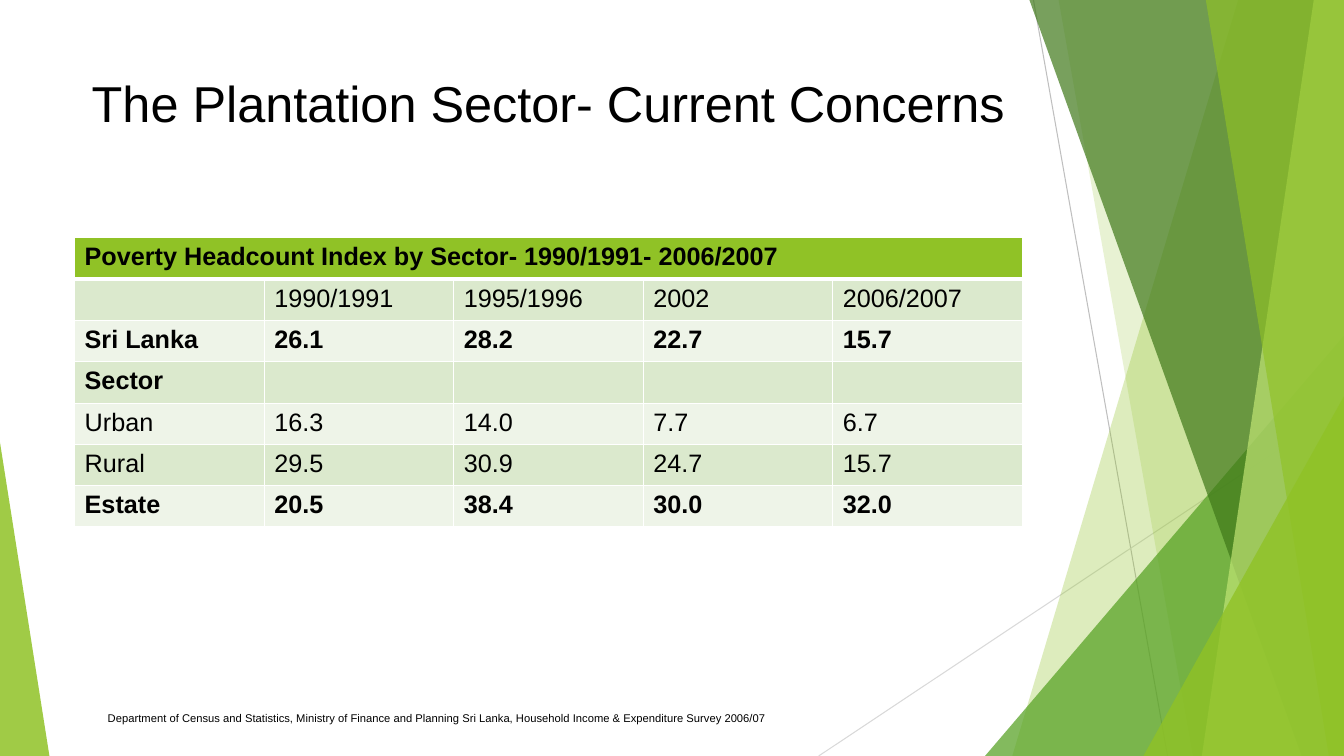
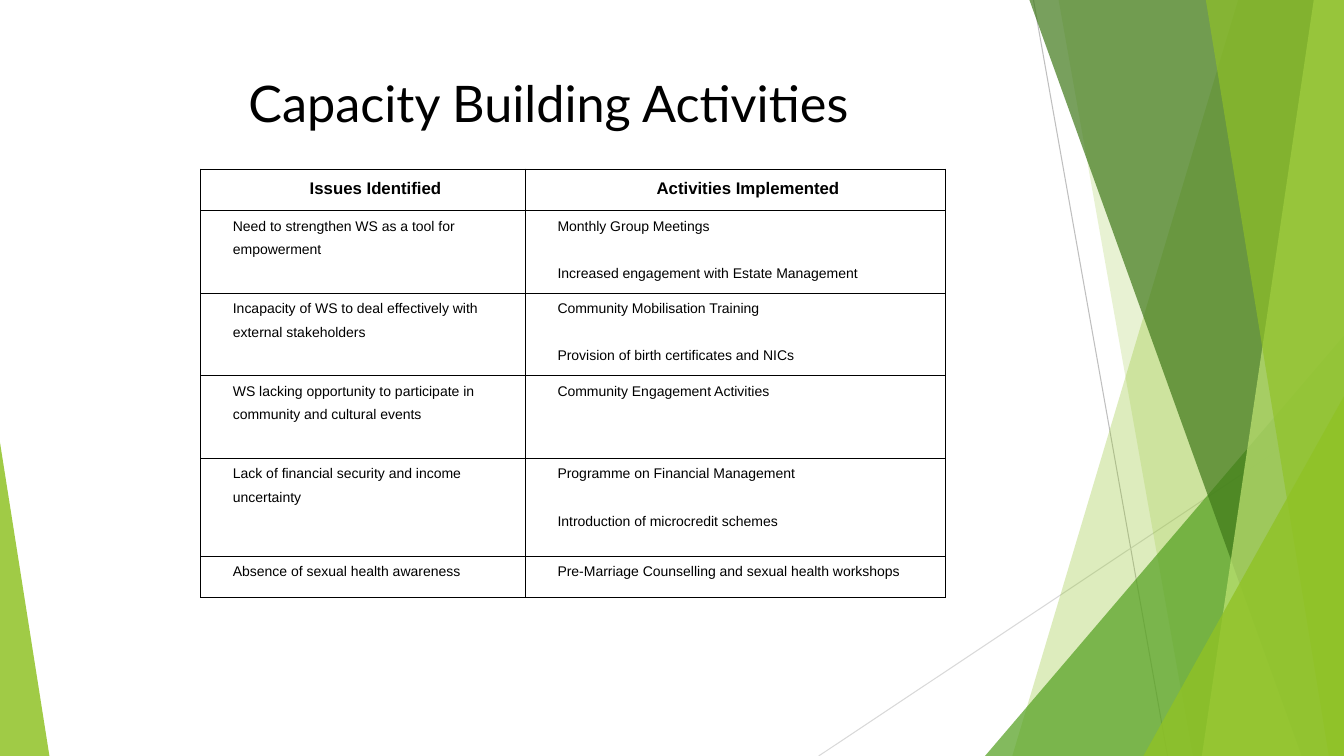
from dataclasses import dataclass

from lxml.etree import SubElement
from pptx import Presentation
from pptx.dml.color import RGBColor
from pptx.enum.shapes import MSO_CONNECTOR, MSO_SHAPE
from pptx.enum.text import PP_ALIGN
from pptx.oxml.ns import qn
from pptx.util import Inches, Pt


@dataclass(frozen=True)
class Theme:
    width: float = 13.33
    height: float = 7.5
    left: float = 0.74
    content_width: float = 9.4
    font: str = "Arial"
    title_font: str = "Lato"
    black: str = "000000"
    white: str = "FFFFFF"
    lime: str = "90C226"
    green: str = "54A021"
    dark_green: str = "3F7819"
    pale_lime: str = "C0E474"
    bands: tuple = ("DBE9CD", "EEF4E8")
    grey: str = "BFBFBF"
    light_grey: str = "D9D9D9"
    title_size: int = 36
    table_size: int = 18
    heading_size: int = 12
    body_size: int = 10
    source_size: int = 8


THEME = Theme()

POVERTY_TITLE = "Poverty Headcount Index by Sector- 1990/1991- 2006/2007"
POVERTY_ROWS = [
    ("", "1990/1991", "1995/1996", "2002", "2006/2007"),
    ("Sri Lanka", "26.1", "28.2", "22.7", "15.7"),
    ("Sector", "", "", "", ""),
    ("Urban", "16.3", "14.0", "7.7", "6.7"),
    ("Rural", "29.5", "30.9", "24.7", "15.7"),
    ("Estate", "20.5", "38.4", "30.0", "32.0"),
]
BOLD_LABELS = {"Sri Lanka", "Sector", "Estate"}
SOURCE = (
    "Department of Census and Statistics, Ministry of Finance and Planning Sri Lanka, "
    "Household Income & Expenditure Survey 2006/07"
)

ACTIVITY_ROWS = [
    (["Issues Identified"], ["Activities Implemented"]),
    (
        ["Need to strengthen WS as a tool for empowerment"],
        ["Monthly Group Meetings", "Increased engagement with Estate Management"],
    ),
    (
        ["Incapacity of WS to deal effectively with external stakeholders"],
        ["Community Mobilisation Training", "Provision of birth certificates and NICs"],
    ),
    (
        ["WS lacking opportunity to participate in community and cultural events"],
        ["Community Engagement Activities"],
    ),
    (
        ["Lack of financial security and income uncertainty"],
        ["Programme on Financial Management", "Introduction of microcredit schemes"],
    ),
    (
        ["Absence of sexual health awareness"],
        ["Pre-Marriage Counselling and sexual health workshops"],
    ),
]


def add_run(paragraph, text, size, font=THEME.font, bold=False):
    run = paragraph.add_run()
    run.text = text
    run.font.name = font
    run.font.size = Pt(size)
    run.font.bold = bold
    run.font.color.rgb = RGBColor.from_string(THEME.black)


def add_text(slide, box, text, size, font=THEME.font, alignment=PP_ALIGN.LEFT):
    shape = slide.shapes.add_textbox(*map(Inches, box))
    shape.text_frame.word_wrap = True
    paragraph = shape.text_frame.paragraphs[0]
    paragraph.alignment = alignment
    add_run(paragraph, text, size, font)


def add_title(slide, text, font):
    box = (THEME.left, 0.67, THEME.content_width, 0.86)
    add_text(slide, box, text, THEME.title_size, font, PP_ALIGN.CENTER)


def add_line(slide, start, end, colour):
    points = map(Inches, (*start, *end))
    connector = slide.shapes.add_connector(MSO_CONNECTOR.STRAIGHT, *points)
    connector.line.color.rgb = RGBColor.from_string(colour)
    connector.line.width = Pt(0.75)
    SubElement(connector._element.spPr, qn("a:effectLst"))


def paint(shape, colour, opacity):
    shape.shadow.inherit = False
    shape.line.fill.background()
    shape.fill.solid()
    shape.fill.fore_color.rgb = RGBColor.from_string(colour)
    fill_colour = shape._element.spPr.find(qn("a:solidFill"))[0]
    SubElement(fill_colour, qn("a:alpha"), val=str(opacity * 1000))


def add_blade(slide, top_x, bottom_x, colour, opacity):
    right, bottom = Inches(THEME.width), Inches(THEME.height)
    builder = slide.shapes.build_freeform(Inches(top_x), 0, scale=1.0)
    builder.add_line_segments([(right, 0), (right, bottom), (Inches(bottom_x), bottom)])
    paint(builder.convert_to_shape(), colour, opacity)


def add_corner(slide, left, top, width, apex, colour, opacity):
    box = (left, top, width, THEME.height - top)
    shape = slide.shapes.add_shape(MSO_SHAPE.ISOSCELES_TRIANGLE, *map(Inches, box))
    shape.adjustments[0] = apex
    paint(shape, colour, opacity)


def add_backdrop(slide):
    add_line(slide, (10.25, 0), (11.58, THEME.height), THEME.grey)
    add_line(slide, (THEME.width, 4.03), (8.12, THEME.height), THEME.light_grey)
    add_blade(slide, 12.28, 10.04, THEME.lime, 30)
    add_blade(slide, 10.5, 11.83, THEME.lime, 20)
    add_corner(slide, 9.77, 3.33, 3.56, 1, THEME.green, 72)
    add_blade(slide, 10.21, 12.91, THEME.dark_green, 70)
    add_blade(slide, 13.03, 11.92, THEME.pale_lime, 70)
    add_blade(slide, 11.96, 13.18, THEME.lime, 65)
    add_corner(slide, 11.34, 3.93, 1.99, 1, THEME.lime, 80)
    add_corner(slide, 0, 4.39, 0.49, 0, THEME.lime, 85)


def add_table(slide, left, top, columns, rows):
    box = (left, top, sum(columns), sum(rows))
    frame = slide.shapes.add_table(len(rows), len(columns), *map(Inches, box))
    table = frame.table
    table.first_row = False
    table.horz_banding = False
    for column, width in zip(table.columns, columns):
        column.width = Inches(width)
    for row, height in zip(table.rows, rows):
        row.height = Inches(height)
    return table


def style_cell(cell, fill, border, **widths):
    properties = cell._tc.get_or_add_tcPr()
    for side in "LRTB":
        width = Pt(widths.get(side, 1))
        line = SubElement(properties, qn(f"a:ln{side}"), w=str(width))
        solid = SubElement(line, qn("a:solidFill"))
        SubElement(solid, qn("a:srgbClr"), val=border)
    cell.fill.solid()
    cell.fill.fore_color.rgb = RGBColor.from_string(fill)


def add_poverty_table(slide):
    count = len(POVERTY_ROWS[0])
    columns = [THEME.content_width / count] * count
    table = add_table(slide, THEME.left, 2.36, columns, [0.41] * (len(POVERTY_ROWS) + 1))
    for cell in table.rows[0].cells:
        style_cell(cell, THEME.lime, THEME.white, B=3)
    heading = table.cell(0, 0)
    heading.merge(table.cell(0, count - 1))
    add_run(heading.text_frame.paragraphs[0], POVERTY_TITLE, THEME.table_size, bold=True)
    for index, values in enumerate(POVERTY_ROWS):
        bold = values[0] in BOLD_LABELS
        top_border = 1 if index else 3
        for cell, text in zip(table.rows[index + 1].cells, values):
            style_cell(cell, THEME.bands[index % 2], THEME.white, T=top_border)
            if text:
                add_run(cell.text_frame.paragraphs[0], text, THEME.table_size, bold=bold)


def fill_activity_cell(cell, items, is_heading):
    style_cell(cell, THEME.white, THEME.black)
    cell.margin_left = cell.margin_right = Inches(0.07)
    cell.margin_top = cell.margin_bottom = 0
    size = THEME.heading_size if is_heading else THEME.body_size
    for index, text in enumerate(items):
        frame = cell.text_frame
        paragraph = frame.add_paragraph() if index else frame.paragraphs[0]
        paragraph.alignment = PP_ALIGN.CENTER if is_heading else PP_ALIGN.LEFT
        paragraph.line_spacing = 1.5
        paragraph.space_before = Pt(17 if index else 0)
        paragraph._p.get_or_add_pPr().set("marL", str(Inches(0.25)))
        add_run(paragraph, text, size, bold=is_heading)


def add_activity_table(slide):
    heights = [0.41, 0.82, 0.82, 0.82, 0.97, 0.41]
    table = add_table(slide, 1.99, 1.68, [3.22, 4.17], heights)
    for index, (row, entries) in enumerate(zip(table.rows, ACTIVITY_ROWS)):
        for cell, items in zip(row.cells, entries):
            fill_activity_cell(cell, items, index == 0)


def add_slide(presentation, title, font):
    slide = presentation.slides.add_slide(presentation.slide_layouts[6])
    add_backdrop(slide)
    add_title(slide, title, font)
    return slide


def main():
    presentation = Presentation()
    presentation.slide_width = Inches(THEME.width)
    presentation.slide_height = Inches(THEME.height)

    concerns = add_slide(presentation, "The Plantation Sector- Current Concerns", THEME.font)
    add_poverty_table(concerns)
    add_text(concerns, (0.97, 7.01, 7.62, 0.24), SOURCE, THEME.source_size)

    activities = add_slide(presentation, "Capacity Building Activities", THEME.title_font)
    add_activity_table(activities)

    presentation.save("out.pptx")


if __name__ == "__main__":
    main()
